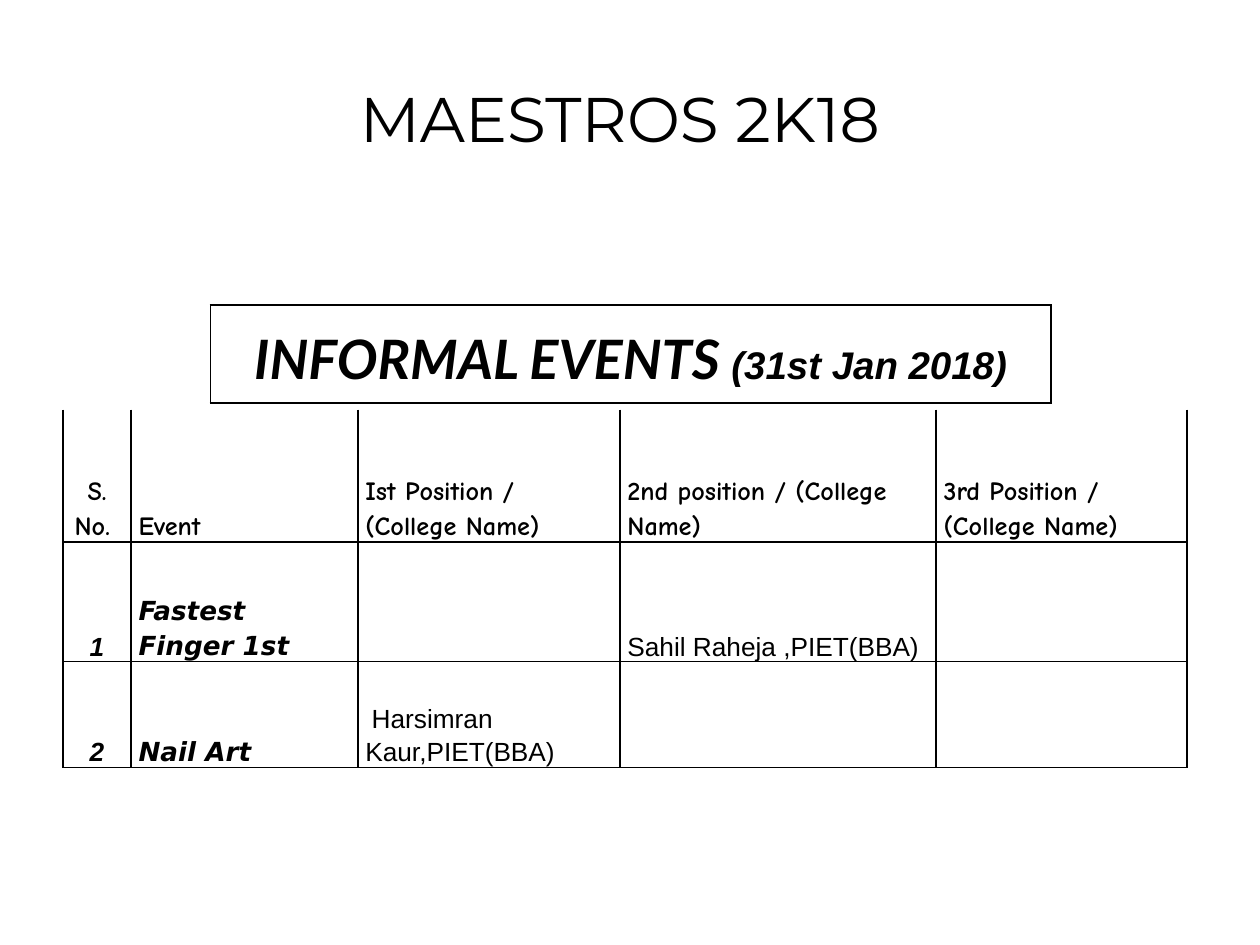
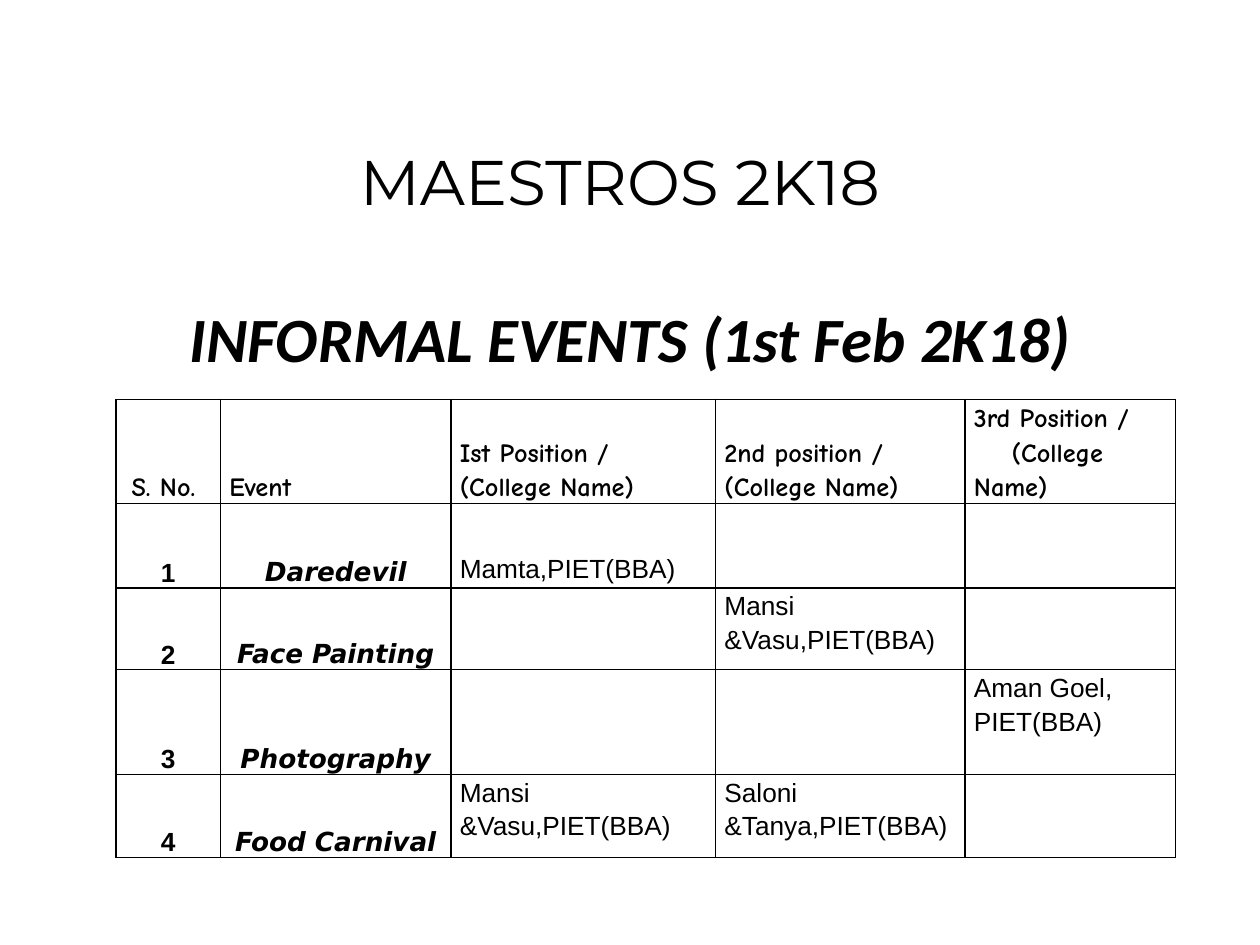
from pptx import Presentation
from pptx.dml.color import RGBColor
from pptx.enum.text import MSO_ANCHOR, PP_ALIGN
from pptx.oxml.ns import qn
from pptx.util import Inches, Pt
from lxml.etree import SubElement

BLACK = RGBColor(0, 0, 0)
TABLE_SIZE = 15
HEADERS = ["S. No. ", "Event", "Ist Position /\n(College Name)",
           "2nd position / (College Name)"]
FIRST_DAY = [
    ["1", "Fastest Finger 1st", "", "Sahil Raheja ,PIET(BBA)", ""],
    ["2", "Nail Art", "Harsimran Kaur,PIET(BBA)", "", ""],
]
SECOND_DAY = [
    ["1", "Daredevil", "Mamta,PIET(BBA)", "", ""],
    ["2", "Face Painting", "", "Mansi &Vasu,PIET(BBA)", ""],
    ["3", "Photography", "", "", "Aman Goel, PIET(BBA)"],
    ["4", "Food Carnival", "Mansi &Vasu,PIET(BBA)", "Saloni &Tanya,PIET(BBA)", ""],
]


def add_run(p, text, font, size, bold=False, italic=False):
    r = p.add_run()
    r.text = text
    r.font.name = font
    r.font.size = Pt(size)
    r.font.bold = bold
    r.font.italic = italic
    r.font.color.rgb = BLACK


def add_text(s, box, text, font, size, wrap=True, bold=False, italic=False):
    tf = s.shapes.add_textbox(*map(Inches, box)).text_frame
    tf.word_wrap = wrap
    p = tf.paragraphs[0]
    p.alignment = PP_ALIGN.CENTER
    add_run(p, text, font, size, bold, italic)


def add_title(s, top):
    add_text(s, (1.75, top, 6.34, 1.09), "MAESTROS 2K18", "Montserrat", 36, wrap=False)


def set_borders(cell, top=True):
    tc_pr = cell._tc.get_or_add_tcPr()
    for side in "LRTB":
        ln = SubElement(tc_pr, qn(f"a:ln{side}"), w=str(Pt(1)))
        if side == "T" and not top:
            SubElement(ln, qn("a:noFill"))
        else:
            fill = SubElement(ln, qn("a:solidFill"))
            SubElement(fill, qn("a:srgbClr"), val=str(BLACK))


def add_grid(s, left, top, col_widths, row_heights, margin, top_border=True):
    """Add an unfilled table with thin black borders and bottom-anchored cells."""
    frame = s.shapes.add_table(len(row_heights), len(col_widths),
                               Inches(left), Inches(top),
                               Inches(sum(col_widths)), Inches(sum(row_heights)))
    table = frame.table
    table.first_row = table.horz_banding = False
    for column, width in zip(table.columns, col_widths):
        column.width = Inches(width)
    for i, (row, height) in enumerate(zip(table.rows, row_heights)):
        row.height = Inches(height)
        for cell in row.cells:
            set_borders(cell, top_border or i > 0)
            cell.fill.background()
            cell.margin_left = cell.margin_right = Inches(margin)
            cell.margin_top = cell.margin_bottom = 0
            cell.vertical_anchor = MSO_ANCHOR.BOTTOM
    return table


def fill_cell(cell, text, font, centered=False, bold=False, italic=False):
    tf = cell.text_frame
    for i, line in enumerate(text.split("\n")):
        p = tf.add_paragraph() if i else tf.paragraphs[0]
        p.line_spacing = 1.15
        p.alignment = PP_ALIGN.CENTER if centered else PP_ALIGN.LEFT
        if line:
            add_run(p, line, font, TABLE_SIZE, bold, italic)


def fill_results(table, headers, rows, number_italic=False, event_centered=False,
                 winner_anchor=MSO_ANCHOR.BOTTOM):
    for col, text in enumerate(headers):
        fill_cell(table.cell(0, col), text, "Comic Neue", centered=col == 0, bold=True)
    for i, (number, event, *winners) in enumerate(rows, 1):
        fill_cell(table.cell(i, 0), number, "Arial", True, True, number_italic)
        fill_cell(table.cell(i, 1), event, "DejaVu Sans", event_centered, True, True)
        for col, winner in enumerate(winners, 2):
            fill_cell(table.cell(i, col), winner, "Arial")
            table.cell(i, col).vertical_anchor = winner_anchor


def indent_first_line(p, inches):
    p._p.get_or_add_pPr().set("indent", str(Inches(inches)))


def add_first_day(s):
    add_title(s, 0.58)
    heading = add_grid(s, 1.67, 2.42, [6.67], [0.78], 0.06).cell(0, 0)
    heading.vertical_anchor = MSO_ANCHOR.MIDDLE
    p = heading.text_frame.paragraphs[0]
    p.alignment = PP_ALIGN.CENTER
    p.line_spacing = 1.15
    add_run(p, "INFORMAL EVENTS ", "Lato", 31, True, True)
    add_run(p, "(31st Jan 2018)", "Arial", 22, True, True)

    table = add_grid(s, 0.5, 3.25, [0.54, 1.8, 2.08, 2.51, 1.99],
                     [1.05, 0.95, 0.84], 0.06, top_border=False)
    fill_results(table, HEADERS + ["3rd Position /\n(College Name)"], FIRST_DAY,
                 number_italic=True)
    table.cell(1, 1).margin_right = Inches(0.15)
    indent_first_line(table.cell(2, 2).text_frame.paragraphs[0], 0.05)


def add_second_day(s):
    table = add_grid(s, 0.92, 3.17, [0.83, 1.83, 2.1, 1.98, 1.67],
                     [0.61, 0.67, 0.65, 0.83, 0.66], 0.07)
    fill_results(table, HEADERS + ["3rd Position /\n(College\nName)"], SECOND_DAY,
                 event_centered=True, winner_anchor=MSO_ANCHOR.TOP)
    third_header = table.cell(0, 4).text_frame.paragraphs
    third_header[0].line_spacing = 1.0
    indent_first_line(third_header[1], 0.3)
    first_winner = table.cell(1, 2)
    first_winner.vertical_anchor = MSO_ANCHOR.BOTTOM
    first_winner.margin_bottom = Inches(0.03)

    add_title(s, 1.08)
    add_text(s, (0.5, 2.33, 9, 0.71), "INFORMAL EVENTS (1st Feb 2K18)",
             "Calibri", 36, bold=True, italic=True)


def main():
    prs = Presentation()
    prs.slide_width = Inches(10)
    prs.slide_height = Inches(7.5)
    for build in (add_first_day, add_second_day):
        build(prs.slides.add_slide(prs.slide_layouts[6]))
    prs.save("out.pptx")


if __name__ == "__main__":
    main()
